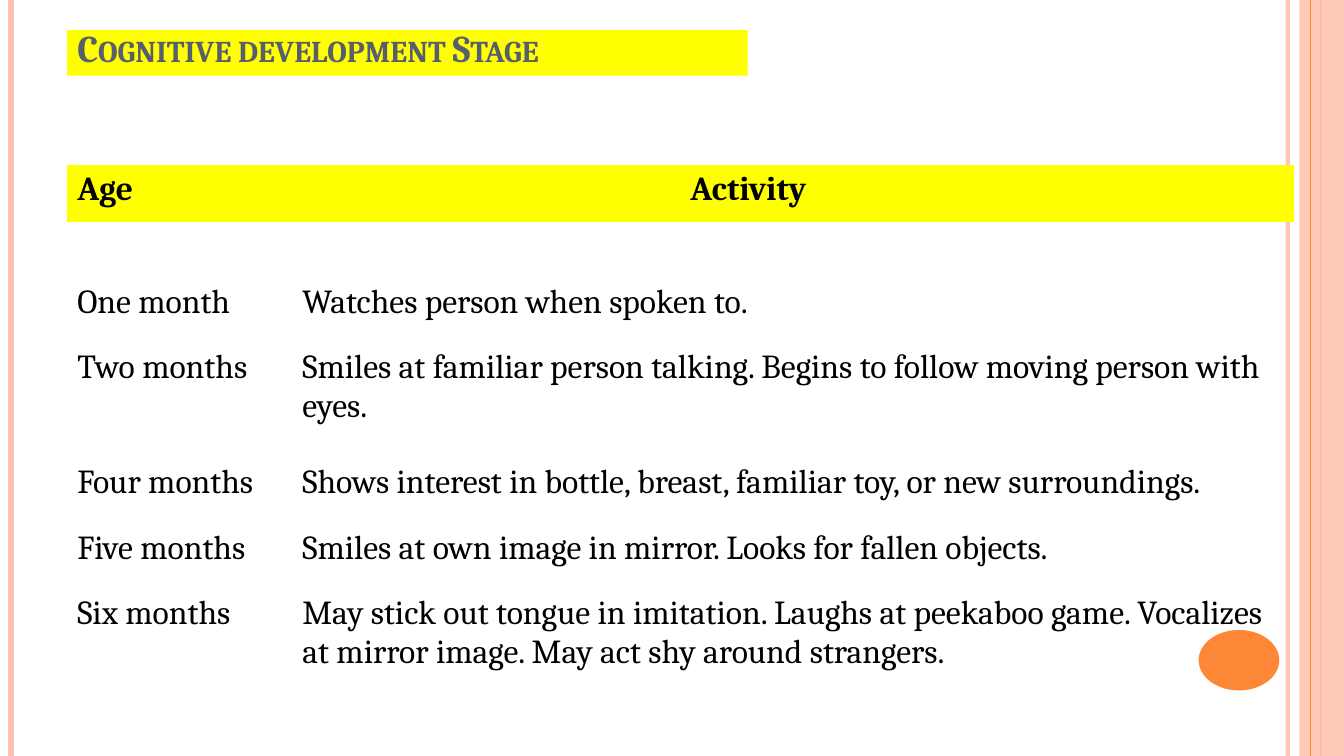
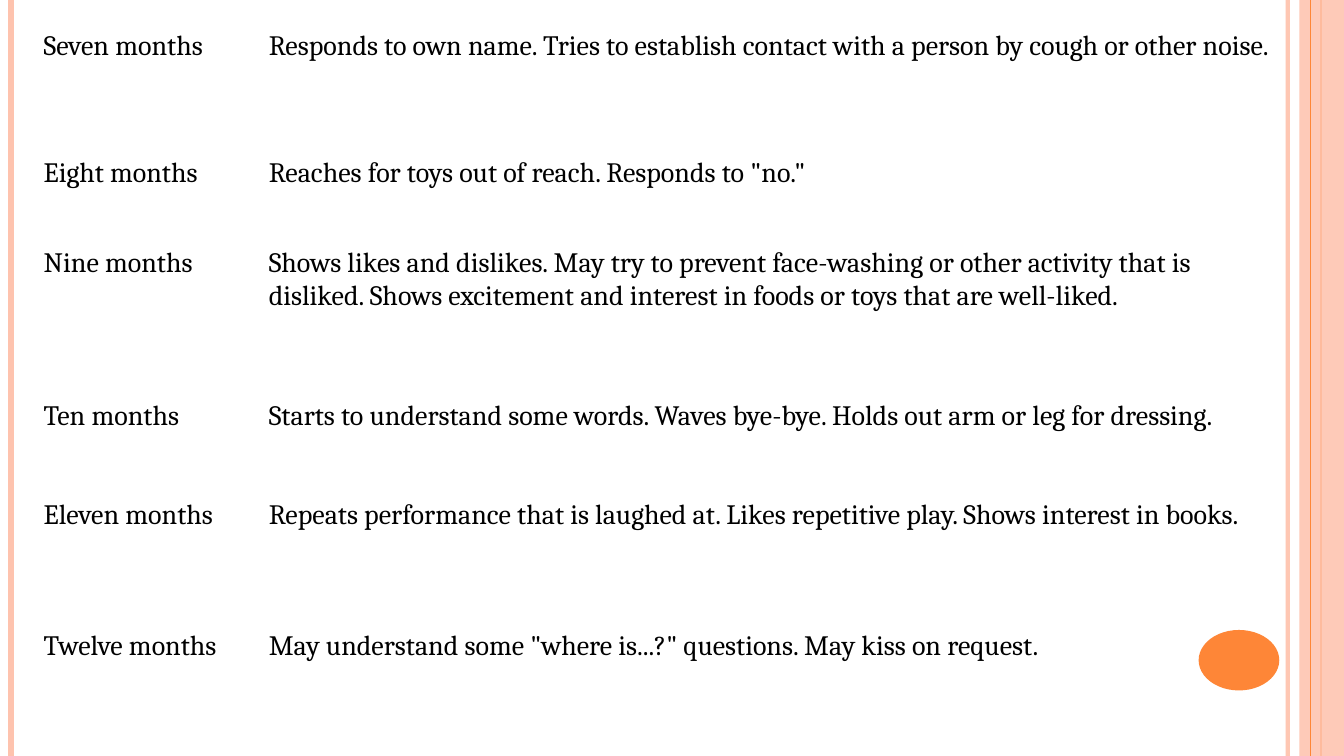
from dataclasses import dataclass

from lxml.etree import SubElement
from pptx import Presentation
from pptx.dml.color import RGBColor
from pptx.enum.shapes import MSO_CONNECTOR, MSO_SHAPE
from pptx.enum.text import MSO_ANCHOR, MSO_AUTO_SIZE
from pptx.oxml.ns import qn
from pptx.slide import Slide
from pptx.text.text import TextFrame
from pptx.util import Inches, Pt

# The slide is a grid of square units, twelve to the inch
COLUMNS, ROWS = 160, 90
FONT = "Cambria"
COLORS = {
    "peach": "FEC3AE",
    "orange": "FE8637",
    "yellow": "FFFF00",
    "slate": "575F6D",
    "black": "000000",
    "white": "FFFFFF",
}
PLAIN_TABLE_STYLE = "{2D5ABB26-0587-4C30-8999-92F81FD0307C}"


@dataclass(frozen=True)
class Rule:
    column: float
    width: float
    color: str
    opacity: int = 100


@dataclass(frozen=True)
class Panel:
    kind: MSO_SHAPE
    column: float
    row: float
    columns: float
    rows: float
    color: str
    opacity: int = 100


@dataclass(frozen=True)
class TableRow:
    """A text of None joins the cell to the one on its left."""
    height: float
    texts: tuple[str | None, ...]
    bold: bool = False
    fill: str | None = None


DECORATION = (
    Rule(153.3, 3, "peach", 93),
    Rule(1.3, 4.5, "peach"),
    Rule(157.3, 1.5, "orange"),
    Panel(MSO_SHAPE.RECTANGLE, 154.7, 0, 5.3, ROWS, "peach", 87),
    Rule(156, 0.75, "orange"),
    Panel(MSO_SHAPE.OVAL, 142.7, 75, 9.6, 7.2, "orange"),
)

EMPTY_ROW = TableRow(6.7, ("", None, None))
FIRST_HALF_YEAR = (
    EMPTY_ROW,
    TableRow(6.7, ("Age", None, "Activity"), bold=True, fill="yellow"),
    EMPTY_ROW,
    TableRow(7.8, ("One month", "Watches person when spoken to.", None)),
    TableRow(13.7, ("Two months", "Smiles at familiar person talking. Begins to "
                    "follow moving person with eyes.", None)),
    TableRow(7.8, ("Four months", "Shows interest in bottle, breast, familiar toy, "
                   "or new surroundings.", None)),
    TableRow(7.8, ("Five months", "Smiles at own image in mirror. Looks for fallen "
                   "objects.", None)),
    TableRow(13.7, ("Six months", "May stick out tongue in imitation. Laughs at "
                    "peekaboo game. Vocalizes at mirror image. May act shy around "
                    "strangers.", None)),
)
SECOND_HALF_YEAR = (
    TableRow(15.1, ("Seven months", "Responds to own name. Tries to establish "
                    "contact with a person by cough or other noise.")),
    TableRow(10.8, ("Eight months", 'Reaches for toys out of reach. Responds to "no."')),
    TableRow(18.2, ("Nine months", "Shows likes and dislikes. May try to prevent "
                    "face-washing or other activity that is disliked. Shows "
                    "excitement and interest in foods or toys that are well-liked.")),
    TableRow(11.8, ("Ten months", "Starts to understand some words. Waves bye-bye. "
                    "Holds out arm or leg for dressing.")),
    TableRow(15.5, ("Eleven months", "Repeats performance that is laughed at. Likes "
                    "repetitive play. Shows interest in books.")),
    TableRow(13.6, ("Twelve months", 'May understand some "where is...?" questions. '
                    "May kiss on request.")),
)


def units(count: float) -> int:
    return Inches(count / 12)


def paint(fill, color: str) -> None:
    fill.solid()
    fill.fore_color.rgb = RGBColor.from_string(COLORS[color])


def set_opacity(shape, percent: int) -> None:
    if percent < 100:
        color = next(shape.element.iter(qn("a:srgbClr")))
        SubElement(color, qn("a:alpha")).set("val", str(percent * 1000))


def write(frame: TextFrame, text: str, *, size: float, color: str = "black",
          bold: bool = False, small_caps: bool = False) -> None:
    run = frame.paragraphs[0].add_run()
    run.text = text
    run.font.name = FONT
    run.font.size = Pt(size)
    run.font.bold = bold
    run.font.color.rgb = RGBColor.from_string(COLORS[color])
    if small_caps:
        run.font._element.set("cap", "small")


def add_rule(slide: Slide, rule: Rule) -> None:
    x = units(rule.column)
    connector = slide.shapes.add_connector(
        MSO_CONNECTOR.STRAIGHT, x, 0, x, units(ROWS))
    connector.line.width = Pt(rule.width)
    paint(connector.line.fill, rule.color)
    set_opacity(connector, rule.opacity)
    SubElement(connector.element.spPr, qn("a:effectLst"))


def add_panel(slide: Slide, panel: Panel) -> None:
    shape = slide.shapes.add_shape(
        panel.kind, units(panel.column), units(panel.row),
        units(panel.columns), units(panel.rows))
    shape.shadow.inherit = False
    paint(shape.fill, panel.color)
    shape.line.fill.background()
    set_opacity(shape, panel.opacity)


def add_decorated_slide(presentation, layout_name: str) -> Slide:
    layout = presentation.slide_layouts.get_by_name(layout_name)
    slide = presentation.slides.add_slide(layout)
    for part in DECORATION:
        if isinstance(part, Rule):
            add_rule(slide, part)
        else:
            add_panel(slide, part)
    return slide


def set_title(slide: Slide, text: str) -> None:
    title = slide.shapes.title
    title.left, title.top = units(8), units(3.6)
    title.width, title.height = units(81), units(5.4)
    paint(title.fill, "yellow")
    frame = title.text_frame
    frame.auto_size = MSO_AUTO_SIZE.NONE
    frame.word_wrap = True
    frame.vertical_anchor = MSO_ANCHOR.BOTTOM
    write(frame, text, size=27, color="slate", bold=True, small_caps=True)
    frame.paragraphs[0].alignment = 1


def add_activity_table(slide: Slide, column: float, row: float,
                       widths: tuple[float, ...], rows: tuple[TableRow, ...],
                       size: float) -> None:
    graphic_frame = slide.shapes.add_table(
        len(rows), len(widths), units(column), units(row),
        units(sum(widths)), units(sum(item.height for item in rows)))
    next(graphic_frame.element.iter(qn("a:tableStyleId"))).text = PLAIN_TABLE_STYLE
    table = graphic_frame.table
    table.first_row = table.horz_banding = False
    for table_column, width in zip(table.columns, widths):
        table_column.width = units(width)
    for row_index, item in enumerate(rows):
        table.rows[row_index].height = units(item.height)
        for column_index, text in enumerate(item.texts):
            cell = table.cell(row_index, column_index)
            if item.fill:
                paint(cell.fill, item.fill)
            else:
                cell.fill.background()
            if text:
                write(cell.text_frame, text, size=size, bold=item.bold)
        starts = [index for index, text in enumerate(item.texts) if text is not None]
        for start, end in zip(starts, starts[1:] + [len(widths)]):
            if end - start > 1:
                table.cell(row_index, start).merge(table.cell(row_index, end - 1))


def main() -> None:
    presentation = Presentation()
    presentation.slide_width, presentation.slide_height = units(COLUMNS), units(ROWS)
    paint(presentation.slide_master.background.fill, "white")

    slide = add_decorated_slide(presentation, "Title Only")
    set_title(slide, "Cognitive development Stage")
    add_activity_table(slide, 8, 13, (26.8, 46.2, 73), FIRST_HALF_YEAR, size=24)

    slide = add_decorated_slide(presentation, "Blank")
    add_activity_table(slide, 4, 3, (26.8, 122.2), SECOND_HALF_YEAR, size=20)

    presentation.save("out.pptx")


if __name__ == "__main__":
    main()
